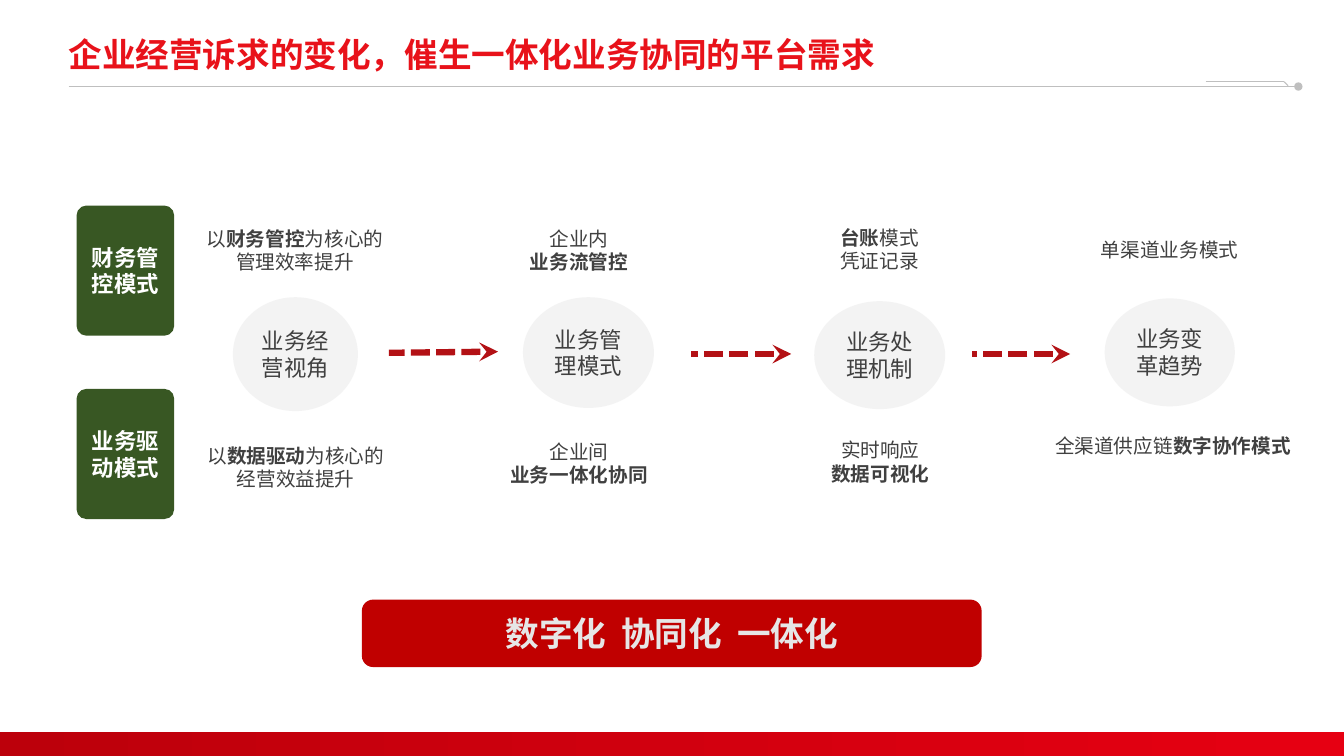
from dataclasses import dataclass
from typing import NamedTuple

from lxml.etree import SubElement
from pptx import Presentation
from pptx.dml.color import RGBColor
from pptx.enum.dml import MSO_LINE
from pptx.enum.shapes import MSO_CONNECTOR, MSO_SHAPE
from pptx.enum.text import MSO_ANCHOR, PP_ALIGN
from pptx.oxml.ns import qn
from pptx.util import Cm, Pt


@dataclass(frozen=True)
class Theme:
    font: str = "Noto Sans CJK SC"
    title: str = "E8121A"
    banner: str = "C00000"
    pale: str = "E6E6E6"
    disc: str = "F2F2F2"
    mode: str = "385723"
    white: str = "FFFFFF"
    ink: str = "404040"
    arrow: str = "B31115"
    rule: str = "BFBFBF"
    start: str = "BC000B"
    end: str = "E60012"
    large: int = 24
    mid: int = 16
    small: int = 14


class Box(NamedTuple):
    left: float
    top: float
    width: float
    height: float


class Label(NamedTuple):
    box: Box
    text: str
    align: PP_ALIGN = PP_ALIGN.CENTER


class Line(NamedTuple):
    x1: float
    y1: float
    x2: float
    y2: float


theme = Theme()
deck = Presentation()
deck.slide_width, deck.slide_height = Cm(33.87), Cm(19.05)
slide = deck.slides.add_slide(deck.slide_layouts[6])


def place(box: Box) -> list:
    return [Cm(side) for side in box]


def write(frame, text: str, size: int, color: str,
          align: PP_ALIGN = PP_ALIGN.CENTER) -> None:
    frame.word_wrap = True
    frame.text = "\n".join("" for _ in text.split("\n"))
    for para, row in zip(frame.paragraphs, text.split("\n")):
        para.alignment = align
        for index, part in enumerate(row.split("*")):
            if not part:
                continue
            run = para.add_run()
            run.text = part
            font = run.font
            font.size = Pt(size)
            font.bold = index % 2 == 1
            font.color.rgb = RGBColor.from_string(color)
            font.name = theme.font
            props = run._r.get_or_add_rPr()
            SubElement(props, qn("a:ea"), typeface=theme.font)
            if part == " ":
                props.set("spc", "540")


def draw_shape(kind: MSO_SHAPE, box: Box, fill: str):
    shape = slide.shapes.add_shape(kind, *place(box))
    shape.shadow.inherit = False
    shape.line.fill.background()
    shape.fill.solid()
    shape.fill.fore_color.rgb = RGBColor.from_string(fill)
    shape.text_frame.vertical_anchor = MSO_ANCHOR.MIDDLE
    return shape


def draw_text(label: Label, size: int, color: str):
    frame = slide.shapes.add_textbox(*place(label.box)).text_frame
    write(frame, label.text, size, color, label.align)
    return frame


def draw_line(line: Line, color: str, width: float):
    link = slide.shapes.add_connector(MSO_CONNECTOR.STRAIGHT, *place(line))
    link.line.color.rgb = RGBColor.from_string(color)
    link.line.width = Pt(width)
    SubElement(link._element.spPr, qn("a:effectLst"))
    return link


def add_tip(link, end: str, kind: str) -> None:
    SubElement(link.line._get_or_add_ln(), qn(f"a:{end}"), type=kind)


def draw_frame() -> None:
    rule = draw_line(Line(1.73, 2.18, 32.72, 2.18), theme.rule, 0.75)
    add_tip(rule, "tailEnd", "oval")
    for line in (Line(30.38, 2.06, 32.36, 2.06), Line(32.36, 2.06, 32.46, 2.16)):
        draw_line(line, theme.rule, 0.75)
    foot = draw_shape(MSO_SHAPE.RECTANGLE, Box(0, 18.44, 33.87, 0.61), theme.end)
    foot.fill.gradient()
    foot.fill.gradient_angle = 0
    for stop, color in zip(foot.fill.gradient_stops, (theme.start, theme.end)):
        stop.color.rgb = RGBColor.from_string(color)
    title = Label(Box(1.73, 0.79, 25.6, 1.27),
                  "*企业经营诉求的变化，催生一体化业务协同的平台需求*", PP_ALIGN.LEFT)
    frame = draw_text(title, theme.large, theme.title)
    frame.margin_left = 0
    frame.vertical_anchor = MSO_ANCHOR.MIDDLE
    frame.paragraphs[0].line_spacing = 0.9


def draw_disc(label: Label) -> None:
    disc = draw_shape(MSO_SHAPE.OVAL, label.box, theme.disc)
    tint = disc._element.spPr.find(qn("a:solidFill"))[0]
    SubElement(tint, qn("a:alpha"), val="85000")
    write(disc.text_frame, label.text, theme.mid, theme.ink)


def draw_mode(label: Label) -> None:
    card = draw_shape(MSO_SHAPE.ROUNDED_RECTANGLE, label.box, theme.mode)
    card.adjustments[0] = 0.1
    write(card.text_frame, label.text, theme.mid, theme.white)


def draw_arrow(line: Line) -> None:
    arrow = draw_line(line, theme.arrow, 4.5)
    arrow.line.dash_style = MSO_LINE.SQUARE_DOT
    add_tip(arrow, "headEnd", "stealth")


modes = (
    Label(Box(1.93, 5.18, 2.46, 3.28), "*财务管控模式*"),
    Label(Box(1.93, 9.8, 2.46, 3.28), "*业务驱动模式*"),
)
discs = (
    Label(Box(5.87, 7.49, 3.15, 2.87), "业务经营视角"),
    Label(Box(13.18, 7.49, 3.3, 2.79), "业务管理模式"),
    Label(Box(20.52, 7.59, 3.3, 2.72), "业务处理机制"),
    Label(Box(27.84, 7.52, 3.28, 2.72), "业务变革趋势"),
)
arrows = (
    Line(12.55, 8.86, 9.8, 8.89),
    Line(19.94, 8.92, 17.42, 8.92),
    Line(26.97, 8.92, 24.49, 8.92),
)
notes = (
    Label(Box(4.88, 5.59, 5.11, 1.45), "以*财务管控*为核心的管理效率提升"),
    Label(Box(11.61, 5.59, 5.97, 1.45), "企业内\n*业务流管控*"),
    Label(Box(19.18, 5.56, 5.97, 1.45), "*台账*模式\n凭证记录"),
    Label(Box(26.47, 5.87, 6.02, 0.86), "单渠道业务模式"),
    Label(Box(4.42, 11.05, 6.07, 1.45), "以*数据驱动*为核心的\n经营效益提升"),
    Label(Box(10.9, 10.95, 7.39, 1.45), "企业间\n*业务一体化协同*"),
    Label(Box(18.49, 10.92, 7.39, 1.45), "实时响应\n*数据可视化*"),
    Label(Box(26.34, 10.82, 6.5, 0.86), "全渠道供应链*数字协作模式*",
          PP_ALIGN.LEFT),
)


def main() -> None:
    draw_frame()
    banner = draw_shape(MSO_SHAPE.ROUNDED_RECTANGLE,
                        Box(9.12, 15.11, 15.62, 1.7), theme.banner)
    write(banner.text_frame, "*数字化* *协同化* *一体化*", theme.large, theme.pale)
    for mode in modes:
        draw_mode(mode)
    for disc in discs:
        draw_disc(disc)
    for arrow in arrows:
        draw_arrow(arrow)
    for note in notes:
        draw_text(note, theme.small, theme.ink)
    deck.save("out.pptx")


if __name__ == "__main__":
    main()
